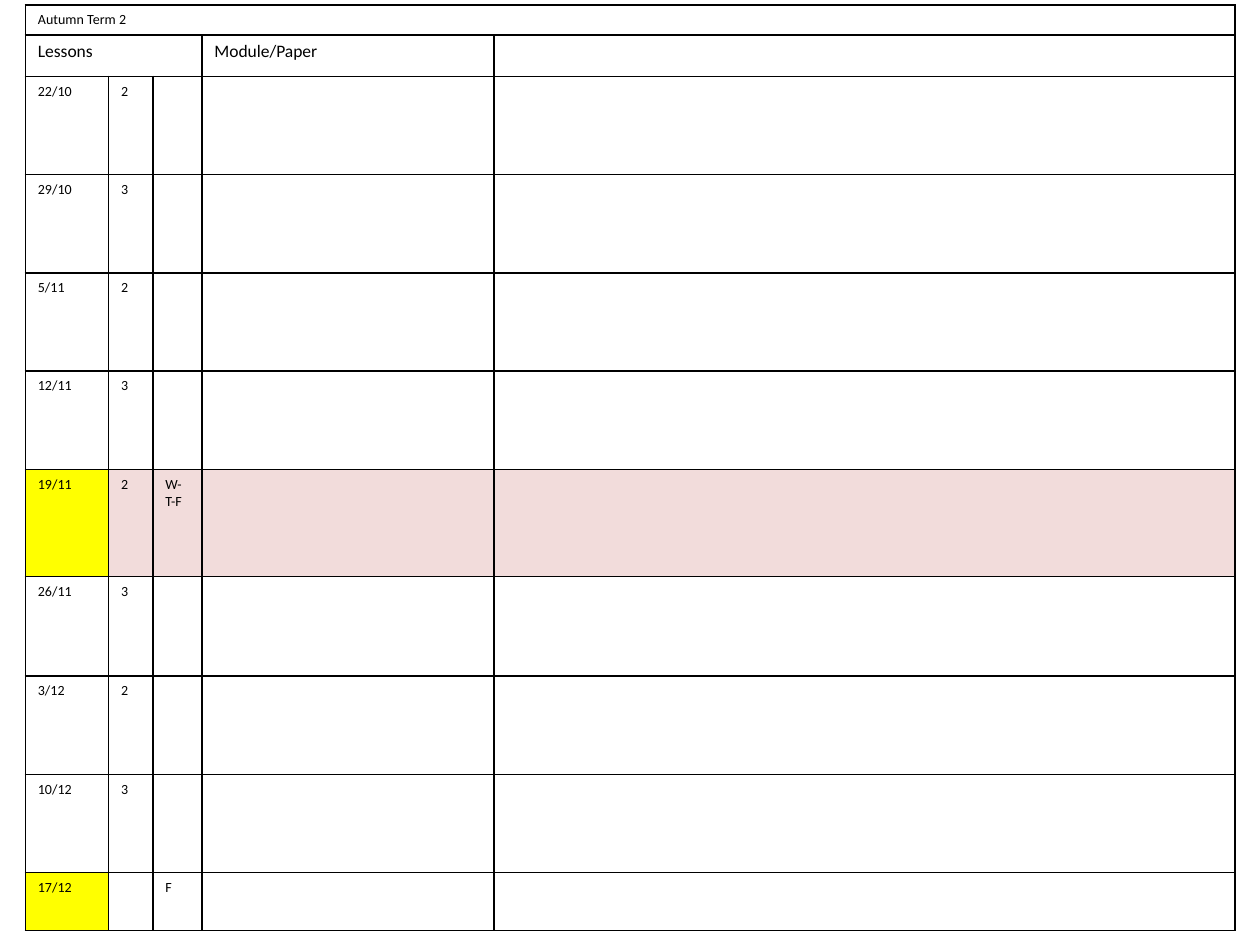
"""Build a one-slide lesson planner table for the second half of the autumn term."""
from lxml import etree
from pptx import Presentation, util as u
from pptx.dml.color import RGBColor
from pptx.oxml.ns import qn

YELLOW, PINK, WHITE, BLACK = "FFFF00", "F2DCDB", "FFFFFF", "000000"
TITLE = "Autumn Term 2"
HEADINGS = ["Lessons", "", "", "Module/Paper", ""]
WEEKS = [
    ("22/10", "2", "", 1.98),
    ("29/10", "3", "", 1.98),
    ("5/11", "2", "", 1.98),
    ("12/11", "3", "", 1.98),
    ("19/11", "2", "W-T-F", 2.16),
    ("26/11", "3", "", 2.01),
    ("3/12", "2", "", 1.98),
    ("10/12", "3", "", 1.98),
    ("17/12", "", "F", 1.17),
]
WEEK_FILLS = {
    "29/10": [WHITE] * 5,
    "19/11": [YELLOW] + [PINK] * 4,
    "17/12": [YELLOW] + [None] * 4,
}
COLUMN_WIDTHS = [1.68, 0.89, 0.99, 5.89, 14.94]
ROW_HEIGHTS = [0.41, 0.84] + [week[3] for week in WEEKS]
LEFT, TOP = 0.51, 0.1


def color(value):
    """Turn a hex string into a colour."""
    return RGBColor.from_string(value)


def add_borders(cell):
    """Draw a one-point black line on each side of a cell."""
    properties = cell._tc.get_or_add_tcPr()
    for position, side in enumerate(("a:lnL", "a:lnR", "a:lnT", "a:lnB")):
        line = etree.Element(qn(side), w=str(u.Pt(1)))
        solid = etree.SubElement(line, qn("a:solidFill"))
        etree.SubElement(solid, qn("a:srgbClr"), val=BLACK)
        properties.insert(position, line)


def write_cell(cell, content, size=8, fill=None):
    """Format a cell and put its text in it."""
    if fill:
        cell.fill.solid()
        cell.fill.fore_color.rgb = color(fill)
    else:
        cell.fill.background()
    add_borders(cell)
    paragraph = cell.text_frame.paragraphs[0]
    if content:
        run = paragraph.add_run()
        run.text = content
        run.font.size = u.Pt(size)
        run.font.name = "Calibri"
        run.font.color.rgb = color(BLACK)
    else:
        etree.SubElement(paragraph._p, qn("a:endParaRPr"), sz=str(size * 100))


def main():
    """Create the presentation and save it."""
    presentation = Presentation()
    presentation.slide_width, presentation.slide_height = u.Cm(25.4), u.Cm(19.05)
    slide = presentation.slides.add_slide(presentation.slide_layouts[6])
    table = slide.shapes.add_table(
        len(ROW_HEIGHTS), len(COLUMN_WIDTHS), u.Cm(LEFT), u.Cm(TOP),
        u.Cm(sum(COLUMN_WIDTHS)), u.Cm(sum(ROW_HEIGHTS))).table
    table.first_row = table.horz_banding = False
    for column, width in zip(table.columns, COLUMN_WIDTHS):
        column.width = u.Cm(width)
    for row, height in zip(table.rows, ROW_HEIGHTS):
        row.height = u.Cm(height)

    table.cell(0, 0).merge(table.cell(0, 4))
    table.cell(1, 0).merge(table.cell(1, 2))
    rows = [([TITLE, "", "", "", ""], 8), (HEADINGS, 10)]
    rows += [([date, count, days, "", ""], 8) for date, count, days, _ in WEEKS]
    for row, (contents, size) in zip(table.rows, rows):
        fills = WEEK_FILLS.get(contents[0], [None] * 5)
        for cell, content, fill in zip(row.cells, contents, fills):
            write_cell(cell, content, size=size, fill=fill)
    presentation.save("out.pptx")


if __name__ == "__main__":
    main()
